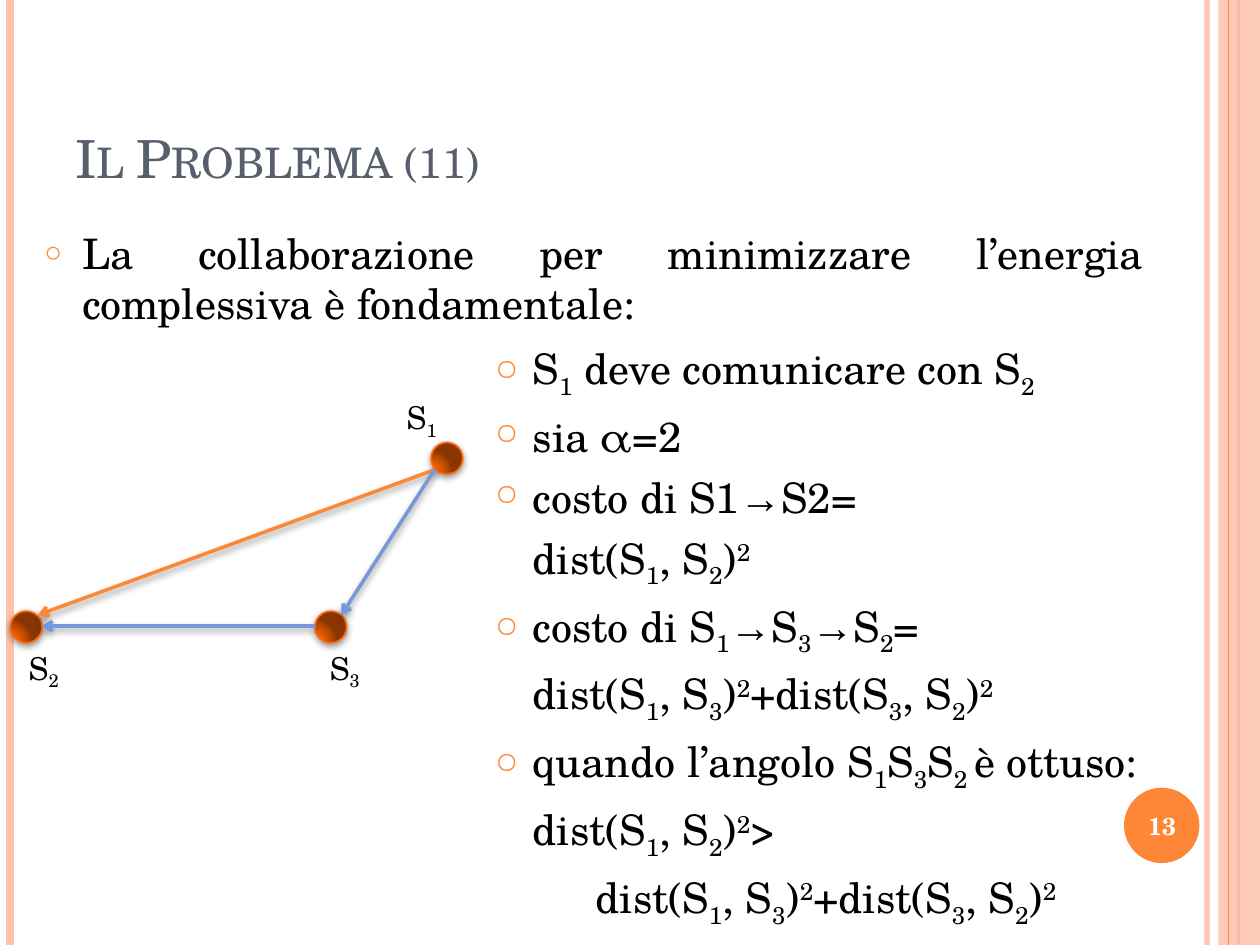
from itertools import groupby

from lxml import etree
from pptx import Presentation
from pptx.dml.color import RGBColor
from pptx.enum.shapes import MSO_CONNECTOR as Connector, MSO_SHAPE as Shape
from pptx.enum.text import MSO_ANCHOR as Anchor, MSO_AUTO_SIZE as AutoSize, PP_ALIGN as Align
from pptx.oxml import parse_xml
from pptx.util import Cm, Pt

ORANGE = RGBColor(0xFE, 0x86, 0x37)
PEACH = RGBColor(0xFE, 0xC3, 0xAE)
NODE_EDGE = RGBColor(0xFF, 0x6B, 0x0A)
BLUE = RGBColor(0x75, 0x98, 0xD9)
SLATE = RGBColor(0x57, 0x5F, 0x6D)
BLACK = RGBColor(0, 0, 0)
WHITE = RGBColor(0xFF, 0xFF, 0xFF)
NODE_STOPS = {0: "FD6400", 30: "F46100", 75: "B74900", 100: "873600"}

FONT, ARROW_FONT = "TeX Gyre Schola", "Arial"
INDENT = Cm(0.76)
DRAWING = "http://schemas.openxmlformats.org/drawingml/2006/main"
BASELINES = {"_": "-25000", "^": "30000"}

INTRO = ["La collaborazione per minimizzare l’energia complessiva è fondamentale:"]
# "_" lowers and "^" raises the next character; a leading tab marks a line without bullet.
STEPS = [
    "S_1 deve comunicare con S_2",
    "sia α=2",
    "costo di S1→S2=",
    "\tdist(S_1, S_2)^2",
    "costo di S_1→S_3→S_2=",
    "\tdist(S_1, S_3)^2+dist(S_3, S_2)^2",
    "quando l’angolo S_1S_3S_2_ è ottuso:",
    "\tdist(S_1, S_2)^2>",
    "\t\tdist(S_1, S_3)^2+dist(S_3, S_2)^2",
]


def add_child(parent, tag, **attributes):
    return etree.SubElement(parent, f"{{{DRAWING}}}{tag}", attributes)


def set_alpha(fill, percent):
    color = fill._xPr.find(f".//{{{DRAWING}}}srgbClr")
    add_child(color, "alpha", val=str(percent * 1000))


def set_shadow(item, alpha=None, blur=4, distance=2):
    """Give the item a soft shadow straight below, or none without alpha."""
    effects = add_child(item._element.spPr, "effectLst")
    if alpha:
        shadow = add_child(effects, "outerShdw", blurRad=str(Pt(blur)), dist=str(Pt(distance)),
                           dir="5400000", rotWithShape="0")
        color = add_child(shadow, "srgbClr", val=str(BLACK))
        add_child(color, "alpha", val=str(alpha * 1000))


def add_line(shapes, start, end, color, width):
    points = [Cm(value) for value in (*start, *end)]
    line = shapes.add_connector(Connector.STRAIGHT, *points)
    line.line.color.rgb = color
    line.line.width = Pt(width)
    return line


def add_arrow(shapes, start, end, color):
    arrow = add_line(shapes, start, end, color, 2)
    add_child(arrow.line._ln, "tailEnd", type="arrow")
    set_shadow(arrow, 40)


def add_stripe(shapes, x, color, width, alpha=None):
    stripe = add_line(shapes, (x, 0), (x, 19.05), color, width)
    if alpha:
        set_alpha(stripe.line.fill, alpha)
    set_shadow(stripe)


def add_plain_shape(shapes, kind, frame, color):
    shape = shapes.add_shape(kind, *map(Cm, frame))
    shape.shadow.inherit = False
    shape.fill.solid()
    shape.fill.fore_color.rgb = color
    shape.line.fill.background()
    return shape


def add_node(shapes, left, top):
    node = shapes.add_shape(Shape.OVAL, Cm(left), Cm(top), Cm(0.64), Cm(0.64))
    stops = "".join(f'<a:gs pos="{place * 1000}"><a:srgbClr val="{color}"/></a:gs>'
                    for place, color in NODE_STOPS.items())
    node._element.spPr.append(parse_xml(
        f'<a:gradFill xmlns:a="{DRAWING}"><a:gsLst>{stops}</a:gsLst><a:path path="circle">'
        '<a:fillToRect l="5000" t="100000" r="120000" b="10000"/></a:path></a:gradFill>'))
    node.line.color.rgb = NODE_EDGE
    node.line.width = Pt(1)
    set_shadow(node, 42, distance=1.6)


def split_marks(text):
    """Yield each character with its baseline mark and whether it is an arrow."""
    mark = ""
    for char in text:
        if char in BASELINES:
            mark = char
        else:
            yield char, (mark, char == "→")
            mark = ""


def write_text(para, text, size, color=BLACK, **extra):
    for (mark, is_arrow), chars in groupby(split_marks(text), key=lambda pair: pair[1]):
        span = para.add_run()
        span.text = "".join(char for char, _ in chars)
        formats = {"name": ARROW_FONT if is_arrow else FONT, "size": Pt(size), **extra}
        for name, value in formats.items():
            setattr(span.font, name, value)
        span.font.color.rgb = color
        if mark:
            span.font._element.set("baseline", BASELINES[mark])


def write_list(frame, lines):
    for number, text in enumerate(lines):
        para = frame.add_paragraph() if number else frame.paragraphs[0]
        para.alignment = Align.JUSTIFY
        para.space_before = Pt(6)
        props = para._p.get_or_add_pPr()
        props.set("marL", str(INDENT))
        props.set("indent", str(-INDENT))
        if text.startswith("\t"):
            add_child(props, "buNone")
        else:
            add_child(add_child(props, "buClr"), "srgbClr", val=str(ORANGE))
            add_child(props, "buSzPct", val="70000")
            add_child(props, "buChar", char="○")
        write_text(para, text, 24)


def prepare(box, frame, anchor=Anchor.TOP, wrap=True):
    """Place the box and return its text frame."""
    for name, value in zip(("left", "top", "width", "height"), frame):
        setattr(box, name, Cm(value))
    formats = {"word_wrap": wrap, "vertical_anchor": anchor, "auto_size": AutoSize.NONE}
    for name, value in formats.items():
        setattr(box.text_frame, name, value)
    return box.text_frame


def add_text_box(shapes, frame, **formats):
    return prepare(shapes.add_textbox(0, 0, 0, 0), frame, **formats)


def add_decoration(shapes):
    add_stripe(shapes, 24.33, PEACH, 3, alpha=93)
    add_stripe(shapes, 0.21, PEACH, 4.5)
    add_stripe(shapes, 24.97, ORANGE, 1.5)
    band = add_plain_shape(shapes, Shape.RECTANGLE, (24.56, 0, 0.84, 19.05), PEACH)
    set_alpha(band.fill, 87)
    add_stripe(shapes, 24.77, ORANGE, 0.75)
    add_plain_shape(shapes, Shape.OVAL, (22.66, 15.88, 1.52, 1.52), ORANGE)


def add_page_number(shapes):
    frame = add_text_box(shapes, (22.58, 15.93, 1.7, 1.45), anchor=Anchor.MIDDLE)
    para = frame.paragraphs[0]
    para.alignment = Align.CENTER
    write_text(para, "13", 14, WHITE, bold=True)


def add_network(shapes):
    group = shapes.add_group_shape().shapes
    for left, top in ((0.21, 12.32), (6.35, 12.32), (8.69, 8.92)):
        add_node(group, left, top)
    for text, left, top in (("S_2", 0.33, 12.95), ("S_3", 6.4, 12.95), ("S_1", 7.95, 7.9)):
        frame = add_text_box(group, (left, top, 1.14, 1.02), wrap=False)
        write_text(frame.paragraphs[0], text, 18)


def main():
    deck = Presentation()
    deck.slide_width, deck.slide_height = Cm(25.4), Cm(19.05)
    page = deck.slides.add_slide(deck.slide_layouts[1])
    shapes = page.shapes
    add_decoration(shapes)

    title = prepare(shapes.title, (1.27, 0.76, 20.75, 3.18), Anchor.BOTTOM).paragraphs[0]
    title.alignment = Align.LEFT
    write_text(title, "Il Problema (11)", 30, SLATE)
    title.runs[0].font._element.set("cap", "small")
    write_list(prepare(page.placeholders[1], (0.64, 4.45, 22.66, 3.18)), INTRO)

    add_page_number(shapes)
    add_network(shapes)
    write_list(add_text_box(shapes, (9.73, 6.78, 14.4, 11.63)), STEPS)
    add_arrow(shapes, (8.76, 9.47), (0.76, 12.4), ORANGE)
    add_arrow(shapes, (8.76, 9.47), (6.88, 12.4), BLUE)
    add_arrow(shapes, (6.35, 12.62), (0.84, 12.62), BLUE)
    deck.save("out.pptx")


if __name__ == "__main__":
    main()
